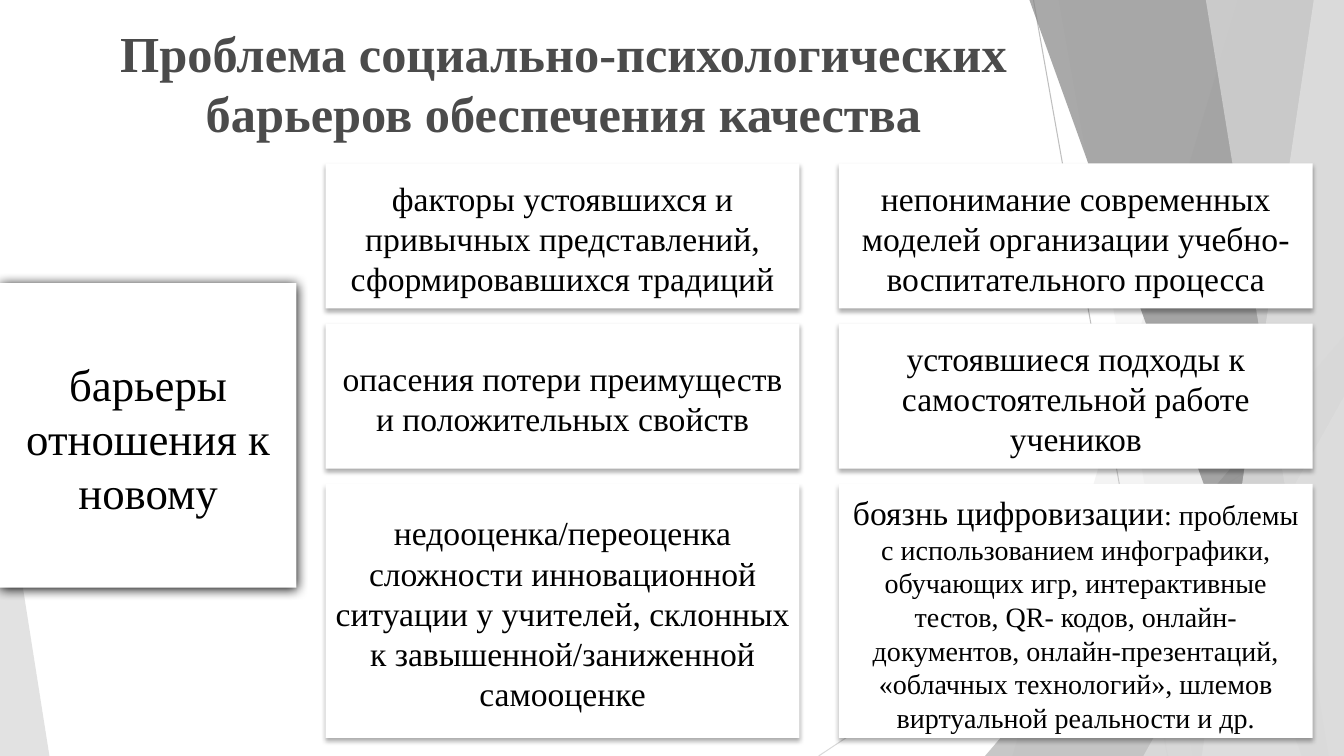
from lxml.etree import SubElement
from pptx import Presentation
from pptx.dml.color import RGBColor
from pptx.enum.shapes import MSO_CONNECTOR, MSO_SHAPE
from pptx.enum.text import MSO_ANCHOR, PP_ALIGN
from pptx.oxml.ns import qn
from pptx.util import Inches, Pt

WIDTH, HEIGHT = 13.33, 7.5
FONT = "Times New Roman"
WHITE, BLACK = RGBColor(255, 255, 255), RGBColor(0, 0, 0)
TITLE_GRAY = RGBColor(0x4B, 0x4B, 0x4B)
LINE_GRAY, LINE_PALE = RGBColor(0xBF, 0xBF, 0xBF), RGBColor(0xD9, 0xD9, 0xD9)
LIGHT, PALE = RGBColor(0xDD, 0xDD, 0xDD), RGBColor(0xEB, 0xEB, 0xEB)
MIDDLE, DARK = RGBColor(0xB2, 0xB2, 0xB2), RGBColor(0x85, 0x85, 0x85)

deck = Presentation()
deck.slide_width, deck.slide_height = Inches(WIDTH), Inches(HEIGHT)
page = deck.slides.add_slide(deck.slide_layouts[6])


def paint(shape, color, opacity=100):
    """Give the shape a flat fill of the given opacity, no outline, no shadow."""
    shape.shadow.inherit = False
    shape.line.fill.background()
    shape.fill.solid()
    shape.fill.fore_color.rgb = color
    if opacity < 100:
        tint = shape.fill._xPr.find(qn("a:solidFill"))[0]
        SubElement(tint, qn("a:alpha"), val=str(opacity * 1000))


def add_card(left, top, width, height, paragraphs, shadow):
    """Add a white card; paragraphs hold (text, size) spans, shadow is opacity, blur, distance."""
    card = page.shapes.add_shape(MSO_SHAPE.RECTANGLE, Inches(left), Inches(top),
                                 Inches(width), Inches(height))
    paint(card, WHITE)
    opacity, blur, distance = shadow
    effects = card._element.spPr.find(qn("a:effectLst"))
    outer = SubElement(effects, qn("a:outerShdw"), blurRad=str(Pt(blur)),
                       dist=str(Pt(distance)), dir="5400000", rotWithShape="0")
    shade = SubElement(outer, qn("a:srgbClr"), val=str(BLACK))
    SubElement(shade, qn("a:alpha"), val=str(opacity * 1000))
    frame = card.text_frame
    frame.word_wrap = True
    frame.vertical_anchor = MSO_ANCHOR.MIDDLE
    frame.margin_left = frame.margin_right = Inches(0.09)
    frame.margin_top, frame.margin_bottom = Inches(0.07), Inches(0.03)
    for index, spans in enumerate(paragraphs):
        para = frame.paragraphs[0] if index == 0 else frame.add_paragraph()
        para.alignment = PP_ALIGN.CENTER
        para.font.name, para.font.color.rgb = FONT, BLACK
        for text, size in spans:
            span = para.add_run()
            span.text = text
            span.font.name, span.font.size = FONT, Pt(size)
            span.font.color.rgb = BLACK


# Background: thin lines, slanted bands that reach the right edge, corner triangles
for x1, y1, x2, y2, color in [
    (10.25, 0, 11.58, HEIGHT, LINE_GRAY),
    (WIDTH, 4.03, 8.12, HEIGHT, LINE_PALE),
]:
    ray = page.shapes.add_connector(MSO_CONNECTOR.STRAIGHT, Inches(x1), Inches(y1),
                                    Inches(x2), Inches(y2))
    ray.line.color.rgb, ray.line.width = color, Pt(0.75)
    SubElement(ray._element.spPr, qn("a:effectLst"))

# (left at the top, left at the bottom, colour, opacity) or (left, top, width, apex, colour, opacity)
backdrop = [
    (12.28, 10.04, LIGHT, 30),
    (10.5, 11.83, LIGHT, 20),
    (9.77, 3.33, 3.56, 1, MIDDLE, 72),
    (10.21, 12.91, DARK, 70),
    (13.03, 11.92, PALE, 70),
    (11.96, 13.18, LIGHT, 65),
    (11.34, 3.93, 1.99, 1, LIGHT, 80),
    (0, 4.39, 0.49, 0, LIGHT, 85),
]
for *place, color, opacity in backdrop:
    if len(place) == 2:
        upper, lower = place
        builder = page.shapes.build_freeform(Inches(upper), 0)
        builder.add_line_segments([(Inches(x), Inches(y)) for x, y in [
            (WIDTH, 0), (WIDTH, HEIGHT), (lower, HEIGHT)]], close=True)
        facet = builder.convert_to_shape()
    else:
        left, top, width, apex = place
        facet = page.shapes.add_shape(MSO_SHAPE.ISOSCELES_TRIANGLE, Inches(left), Inches(top),
                                      Inches(width), Inches(HEIGHT - top))
        facet.adjustments[0] = apex
    paint(facet, color, opacity)

title = page.shapes.add_textbox(Inches(0.89), Inches(0.17), Inches(9.4), Inches(1.44))
title.text_frame.word_wrap = True
heading = title.text_frame.paragraphs[0]
heading.text = "Проблема социально-психологических барьеров обеспечения качества"
heading.alignment = PP_ALIGN.CENTER
heading.font.name, heading.font.size, heading.font.bold = FONT, Pt(36), True
heading.font.color.rgb = TITLE_GRAY

add_card(0, 2.81, 2.94, 3.02, [[("барьеры отношения к новому", 32)]], (100, 8.5, 1))

# Grid of barriers: two columns, three rows
GRID_LEFT, GRID_TOP = 3.23, 1.62
COLUMN_STEP, ROW_STEP = 5.09, 1.59
CARD_WIDTH, ROW_HEIGHTS = 4.7, [1.44, 1.44, 2.52]
barriers = [
    [
        [[("факторы устоявшихся и привычных представлений, сформировавшихся традиций", 24)]],
        [[("непонимание современных моделей организации учебно-воспитательного процесса", 24)]],
    ],
    [
        [[("опасения потери преимуществ и положительных свойств", 24)]],
        [[("устоявшиеся подходы к самостоятельной работе учеников", 24)]],
    ],
    [
        [[("недооценка/переоценка сложности инновационной ситуации у учителей, "
           "склонных к завышенной/заниженной самооценке", 24)]],
        [
            [("боязнь цифровизации", 24),
             (": проблемы с использованием инфографики, обучающих игр, интерактивные "
              "тестов, QR- кодов, онлайн-документов, онлайн-презентаций,", 20)],
            [("«облачных технологий», шлемов виртуальной реальности и др.", 20)],
        ],
    ],
]
for row, cards in enumerate(barriers):
    for column, paragraphs in enumerate(cards):
        add_card(GRID_LEFT + column * COLUMN_STEP, GRID_TOP + row * ROW_STEP,
                 CARD_WIDTH, ROW_HEIGHTS[row], paragraphs, (32, 3.5, 2.2))

deck.save("out.pptx")
